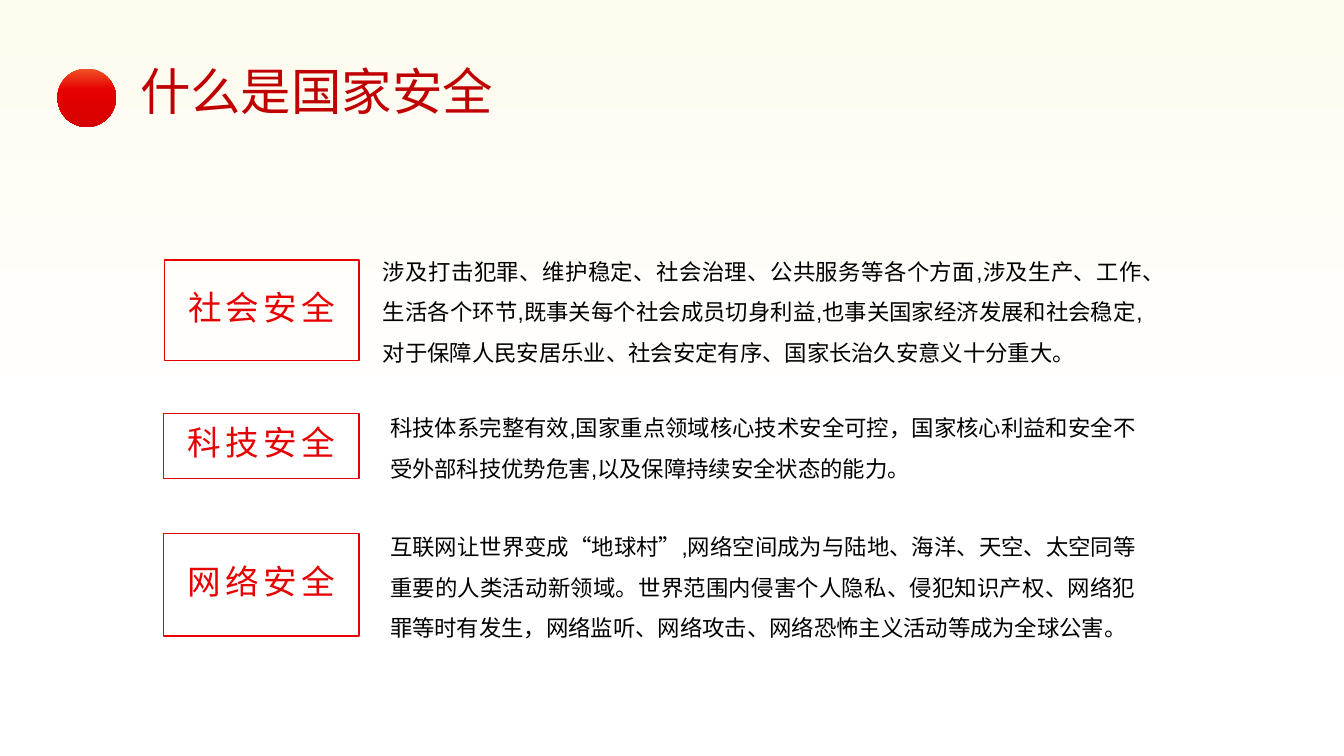
from pptx import Presentation
from pptx.dml.color import RGBColor
from pptx.enum.shapes import MSO_SHAPE
from pptx.enum.text import MSO_ANCHOR, MSO_AUTO_SIZE, PP_ALIGN
from pptx.oxml.ns import qn
from pptx.util import Inches, Pt
from lxml import etree
from copy import deepcopy

CJK_FONT = "Noto Sans CJK SC"
RED = "E60000"

TOPICS = [
    ("社会安全", (1.63, 2.58, 1.93, 1), (3.7, 2.38, 7.73, 1.31),
     "涉及打击犯罪、维护稳定、社会治理、公共服务等各个方面,涉及生产、工作、"
     "生活各个环节,既事关每个社会成员切身利益,也事关国家经济发展和社会稳定,"
     "对于保障人民安居乐业、社会安定有序、国家长治久安意义十分重大。"),
    ("科技安全", (1.62, 4.1, 1.94, 0.65), (3.77, 3.93, 7.6, 0.91),
     "科技体系完整有效,国家重点领域核心技术安全可控，国家核心利益和安全"
     "不受外部科技优势危害,以及保障持续安全状态的能力。"),
    ("网络安全", (1.62, 5.29, 1.94, 1.02), (3.77, 5.11, 7.6, 1.31),
     "互联网让世界变成“地球村”,网络空间成为与陆地、海洋、天空、太空同"
     "等重要的人类活动新领域。世界范围内侵害个人隐私、侵犯知识产权、网络"
     "犯罪等时有发生，网络监听、网络攻击、网络恐怖主义活动等成为全球公害。"),
]


def rgb(color):
    return RGBColor.from_string(color)


def box(bounds):
    return [Inches(v) for v in bounds]


def style_text(p, text, size, color, font, align, spacing=None):
    p.text = text
    p.alignment = align
    p.font.size = Pt(size)
    p.font.name = font
    p.font.color.rgb = rgb(color)
    props = p.font._element if hasattr(p.font, "_element") else p._p.pPr.find(qn("a:defRPr"))
    if font == CJK_FONT:
        ea = etree.Element(qn("a:ea"), typeface=font)
        props.find(qn("a:latin")).addnext(ea)
    if spacing:
        props.set("spc", str(spacing * 100))


def add_gradient_shape(slide, kind, bounds, stops):
    sp = slide.shapes.add_shape(kind, *box(bounds))
    sp.shadow.inherit = False
    sp.line.fill.background()
    sp.fill.gradient()
    sp.fill.gradient_angle = 270
    stop_list = sp._element.spPr.find(qn("a:gradFill")).find(qn("a:gsLst"))
    while len(stop_list) < len(stops):
        stop_list.append(deepcopy(stop_list[-1]))
    for stop, (position, color) in zip(sp.fill.gradient_stops, stops):
        stop.position = position
        stop.color.rgb = rgb(color)


def add_title(slide, text, bounds):
    sp = slide.shapes.title
    sp.left, sp.top, sp.width, sp.height = box(bounds)
    tf = sp.text_frame
    tf.vertical_anchor = MSO_ANCHOR.TOP
    tf.auto_size = MSO_AUTO_SIZE.NONE
    style_text(tf.paragraphs[0], text, 36, "C00000", CJK_FONT, PP_ALIGN.JUSTIFY)


def add_label(slide, text, bounds):
    sp = slide.shapes.add_shape(MSO_SHAPE.RECTANGLE, *box(bounds))
    sp.shadow.inherit = False
    sp.fill.background()
    sp.line.color.rgb = rgb(RED)
    sp.line.width = Pt(1)
    tf = sp.text_frame
    tf.vertical_anchor = MSO_ANCHOR.MIDDLE
    tf.margin_bottom = Inches(0.12)
    style_text(tf.paragraphs[0], text, 24, RED, CJK_FONT, PP_ALIGN.CENTER, 3)


def add_description(slide, text, bounds):
    tf = slide.shapes.add_textbox(*box(bounds)).text_frame
    tf.word_wrap = True
    tf.auto_size = MSO_AUTO_SIZE.SHAPE_TO_FIT_TEXT
    p = tf.paragraphs[0]
    p.line_spacing = 1.5
    style_text(p, text, 16, "000000", "Arial", PP_ALIGN.JUSTIFY)


def main():
    prs = Presentation()
    prs.slide_width, prs.slide_height = Inches(13.33), Inches(7.5)
    slide = prs.slides.add_slide(prs.slide_layouts[5])
    add_gradient_shape(slide, MSO_SHAPE.RECTANGLE, (0, 0, 13.33, 7.5),
                       [(0, "FEFBEF"), (0.57, "FFFFFF")])
    slide.shapes._spTree.append(slide.shapes.title._element)
    add_title(slide, "什么是国家安全", (1.29, 0.55, 4.04, 0.71))
    add_gradient_shape(slide, MSO_SHAPE.OVAL, (0.57, 0.68, 0.58, 0.58),
                       [(0, "F05327"), (0.36, RED), (1, "D60000")])
    for name, label_bounds, text_bounds, description in TOPICS:
        add_label(slide, name, label_bounds)
        add_description(slide, description, text_bounds)
    prs.save("out.pptx")


if __name__ == "__main__":
    main()
